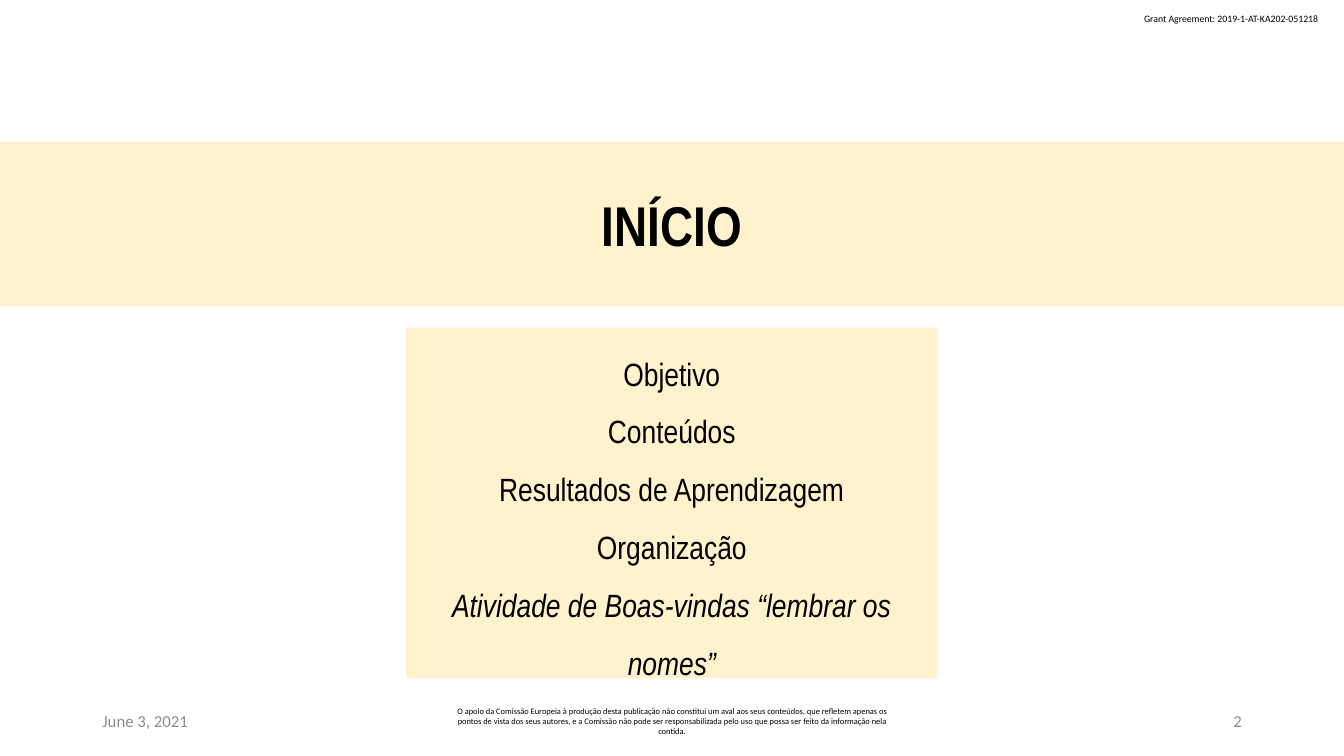
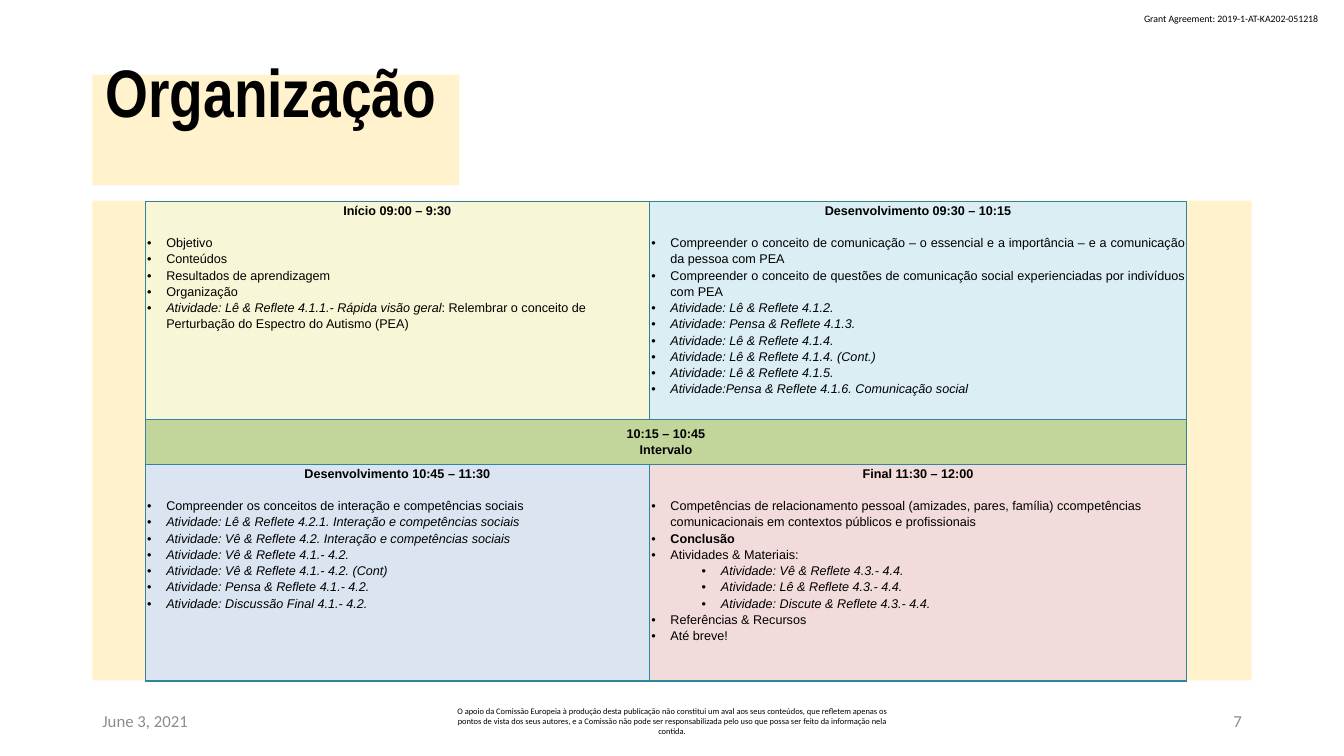
from dataclasses import dataclass

import lxml.etree
import pptx
import pptx.dml.color
import pptx.enum.shapes
import pptx.enum.text
import pptx.oxml.ns
import pptx.util

RGBColor = pptx.dml.color.RGBColor
Align = pptx.enum.text.PP_ALIGN
Anchor = pptx.enum.text.MSO_ANCHOR
Inches, Pt = pptx.util.Inches, pptx.util.Pt
qn = pptx.oxml.ns.qn

BLACK = RGBColor(0x00, 0x00, 0x00)
GREY = RGBColor(0x8C, 0x8C, 0x8C)
CREAM = RGBColor(0xFF, 0xF2, 0xCC)
TEAL = RGBColor(0x31, 0x84, 0x9B)
YELLOW = RGBColor(0xF7, 0xF7, 0xD7)
SKY = RGBColor(0xDA, 0xEE, 0xF3)
GREEN = RGBColor(0xC2, 0xD6, 0x9B)
BLUE = RGBColor(0xDB, 0xE5, 0xF1)
ROSE = RGBColor(0xF2, 0xDB, 0xDB)

TITLE_FONT, SMALL_FONT, TABLE_FONT = "Arial Narrow", "Calibri", "Arial"
BAND_INSETS = (0.13, 0.07, 0.13, 0.07)
TEXT_INSETS = (0.1, 0.05, 0.1, 0.05)
CELL_INSETS = (0.02, 0, 0.02, 0)

GRANT = "Grant Agreement: 2019-1-AT-KA202-051218"
DATE = "June 3, 2021"
DISCLAIMER = (
    "O apoio da Comissão Europeia à produção desta publicação não constitui um aval aos seus "
    "conteúdos, que refletem apenas os pontos de vista dos seus autores, e a Comissão não pode ser "
    "responsabilizada pelo uso que possa ser feito da informação nela contida."
)


@dataclass
class Box:
    left: float
    top: float
    width: float
    height: float

    def inner(self, left, top, width, height):
        """Return an inner box, given in percent of this one."""
        return Box(
            self.left + self.width * left / 100,
            self.top + self.height * top / 100,
            self.width * width / 100,
            self.height * height / 100,
        )

    def lengths(self):
        return [Inches(value) for value in (self.left, self.top, self.width, self.height)]


@dataclass
class Line:
    """One paragraph; spans are (text, style) pairs, where style holds b or i."""
    spans: list
    level: int = 0


def plain(text, level=0):
    return Line([(text, "")], level)


def italic(text, level=0):
    return Line([(text, "i")], level)


def bold(text):
    return Line([(text, "b")])


SLIDE = Box(0, 0, 13.33, 7.5)
CONTENT_LEFT, CONTENT_WIDTH = 6.88, 86.25

WELCOME_TOPICS = [
    plain("Objetivo"),
    plain("Conteúdos"),
    plain("Resultados de Aprendizagem"),
    plain("Organização"),
    italic("Atividade de Boas-vindas “lembrar os nomes”"),
]


@dataclass
class Session:
    row: int
    column: int
    color: RGBColor
    heading: str
    lines: list
    align: Align = Align.LEFT


SESSIONS = [
    Session(0, 0, YELLOW, "Início 09:00 – 9:30", [
        plain("Objetivo"),
        plain("Conteúdos"),
        plain("Resultados de aprendizagem"),
        plain("Organização"),
        Line([
            ("Atividade: Lê & Reflete 4.1.1.- Rápida visão geral", "i"),
            (": Relembrar o conceito de Perturbação do Espectro do Autismo (PEA)", ""),
        ]),
    ]),
    Session(0, 1, SKY, "Desenvolvimento 09:30 – 10:15", [
        plain("Compreender o conceito de comunicação – o essencial e a importância – "
              "e a comunicação da pessoa com PEA"),
        plain("Compreender o conceito de questões de comunicação social experienciadas "
              "por indivíduos com PEA"),
        italic("Atividade: Lê & Reflete 4.1.2."),
        italic("Atividade: Pensa & Reflete 4.1.3."),
        italic("Atividade: Lê & Reflete 4.1.4."),
        italic("Atividade: Lê & Reflete 4.1.4. (Cont.)"),
        italic("Atividade: Lê & Reflete 4.1.5."),
        italic("Atividade:Pensa & Reflete 4.1.6. Comunicação social"),
    ], Align.JUSTIFY),
    Session(2, 0, BLUE, "Desenvolvimento 10:45 – 11:30", [
        plain("Compreender os conceitos de interação e competências sociais"),
        italic("Atividade: Lê & Reflete 4.2.1. Interação e competências sociais"),
        italic("Atividade: Vê & Reflete 4.2. Interação e competências sociais"),
        italic("Atividade: Vê & Reflete 4.1.- 4.2."),
        italic("Atividade: Vê & Reflete 4.1.- 4.2. (Cont)"),
        italic("Atividade: Pensa & Reflete 4.1.- 4.2."),
        italic("Atividade: Discussão Final 4.1.- 4.2."),
    ]),
    Session(2, 1, ROSE, "Final 11:30 – 12:00", [
        plain("Competências de relacionamento pessoal (amizades, pares, família) ccompetências "
              "comunicacionais em contextos públicos e profissionais"),
        bold("Conclusão"),
        plain("Atividades & Materiais:"),
        italic("Atividade: Vê & Reflete 4.3.- 4.4.", 1),
        italic("Atividade: Lê & Reflete 4.3.- 4.4.", 1),
        italic("Atividade: Discute & Reflete 4.3.- 4.4.", 1),
        plain("Referências & Recursos"),
        plain("Até breve!"),
    ]),
]
BREAK_LINES = [bold("10:15 – 10:45"), bold("Intervalo")]


def set_insets(target, insets):
    target.margin_left, target.margin_top, target.margin_right, target.margin_bottom = map(
        Inches, insets)


def write_lines(frame, lines, font, size, color=BLACK, align=Align.LEFT, spacing=1.0):
    """Fill an empty text frame and return its paragraphs."""
    paragraphs = []
    for line in lines:
        para = frame.add_paragraph() if paragraphs else frame.paragraphs[0]
        para.alignment = align
        para.line_spacing = spacing
        for text, style in line.spans:
            span = para.add_run()
            span.text = text
            span.font.name = font
            span.font.size = Pt(size)
            span.font.color.rgb = color
            span.font.bold = "b" in style
            span.font.italic = "i" in style
        paragraphs.append(para)
    return paragraphs


def add_bullet(para, level):
    properties = para._p.get_or_add_pPr()
    properties.set("marL", str(Inches(0.19 + 0.5 * level)))
    properties.set("indent", str(-Inches(0.19)))
    lxml.etree.SubElement(properties, qn("a:buFont")).set("typeface", TABLE_FONT)
    lxml.etree.SubElement(properties, qn("a:buChar")).set("char", "•")
    para.level = level


def add_label(page, box, text, size, color=BLACK, align=Align.LEFT, anchor=Anchor.MIDDLE, wrap=True):
    frame = page.shapes.add_textbox(*box.lengths()).text_frame
    frame.word_wrap = wrap
    frame.vertical_anchor = anchor
    set_insets(frame, TEXT_INSETS)
    write_lines(frame, [plain(text)], SMALL_FONT, size, color, align)


def add_band(page, box, anchor=Anchor.MIDDLE, insets=BAND_INSETS):
    """Draw a cream rectangle and return its text frame."""
    band = page.shapes.add_shape(pptx.enum.shapes.MSO_SHAPE.RECTANGLE, *box.lengths())
    band.shadow.inherit = False
    band.fill.solid()
    band.fill.fore_color.rgb = CREAM
    band.line.fill.background()
    frame = band.text_frame
    frame.word_wrap = True
    frame.vertical_anchor = anchor
    set_insets(frame, insets)
    return frame


def add_footer(page, box, number):
    add_label(page, box.inner(0, 0, 26.09, 100), DATE, 12, GREY)
    add_label(page, box.inner(30.43, 0, 39.13, 100), DISCLAIMER, 6, align=Align.CENTER)
    add_label(page, box.inner(73.91, 0, 26.09, 100), str(number), 12, GREY, Align.RIGHT)


def add_page(deck, number):
    """Add a blank slide with the grant line and the footer."""
    page = deck.slides.add_slide(deck.slide_layouts[6])
    add_label(page, SLIDE.inner(84.38, 1.07, 14.77, 2.93), GRANT, 7, anchor=Anchor.TOP, wrap=False)
    add_footer(page, SLIDE.inner(CONTENT_LEFT, 92.67, CONTENT_WIDTH, 5.33), number)
    return page


def style_cell(cell, color, insets):
    set_insets(cell, insets)
    properties = cell._tc.get_or_add_tcPr()
    for side in ("a:lnL", "a:lnR", "a:lnT", "a:lnB"):
        border = lxml.etree.SubElement(properties, qn(side), w=str(Pt(1)))
        fill = lxml.etree.SubElement(border, qn("a:solidFill"))
        lxml.etree.SubElement(fill, qn("a:srgbClr"), val=str(TEAL))
    cell.fill.solid()
    cell.fill.fore_color.rgb = color


def fill_session(cell, session):
    style_cell(cell, session.color, CELL_INSETS)
    lines = [bold(session.heading)] + session.lines
    heading, *items = write_lines(
        cell.text_frame, lines, TABLE_FONT, 9, align=session.align, spacing=1.15)
    heading.alignment = Align.CENTER
    heading.space_after = Pt(11.6)
    for para, line in zip(items, session.lines):
        add_bullet(para, line.level)


def add_schedule(page, box):
    table = page.shapes.add_table(3, 2, *box.lengths()).table
    table.first_row = table.horz_banding = False
    for column, share in zip(table.columns, (48.4, 51.6)):
        column.width = Inches(box.width * share / 100)
    for row, share in zip(table.rows, (45.57, 9.28, 45.15)):
        row.height = Inches(box.height * share / 100)
    for session in SESSIONS:
        fill_session(table.cell(session.row, session.column), session)
    for cell in table.rows[1].cells:
        style_cell(cell, GREEN, TEXT_INSETS)
    pause = table.cell(1, 0)
    pause.merge(table.cell(1, 1))
    write_lines(pause.text_frame, BREAK_LINES, TABLE_FONT, 9, align=Align.CENTER, spacing=1.15)


def build_section_page(deck, number):
    page = add_page(deck, number)
    heading = add_band(page, SLIDE.inner(0, 18.8, 100, 21.73))
    write_lines(heading, [bold("INÍCIO")], TITLE_FONT, 40, align=Align.CENTER)
    topics = add_band(page, SLIDE.inner(30.23, 43.33, 39.53, 46.4), Anchor.TOP)
    write_lines(topics, WELCOME_TOPICS, TITLE_FONT, 23, align=Align.CENTER, spacing=1.5)


def build_schedule_page(deck, number):
    page = add_page(deck, number)
    title = add_band(page, SLIDE.inner(CONTENT_LEFT, 9.87, 27.3, 14.67), insets=(0.13, 0, 0.13, 0.68))
    write_lines(title, [bold("Organização")], TITLE_FONT, 48, spacing=0.9)
    add_band(page, SLIDE.inner(CONTENT_LEFT, 26.53, CONTENT_WIDTH, 63.47))
    add_schedule(page, SLIDE.inner(10.8, 26.67, 77.5, 63.33))


def main():
    deck = pptx.Presentation()
    deck.slide_width = Inches(SLIDE.width)
    deck.slide_height = Inches(SLIDE.height)
    build_section_page(deck, 2)
    build_schedule_page(deck, 7)
    deck.save("out.pptx")


if __name__ == "__main__":
    main()
